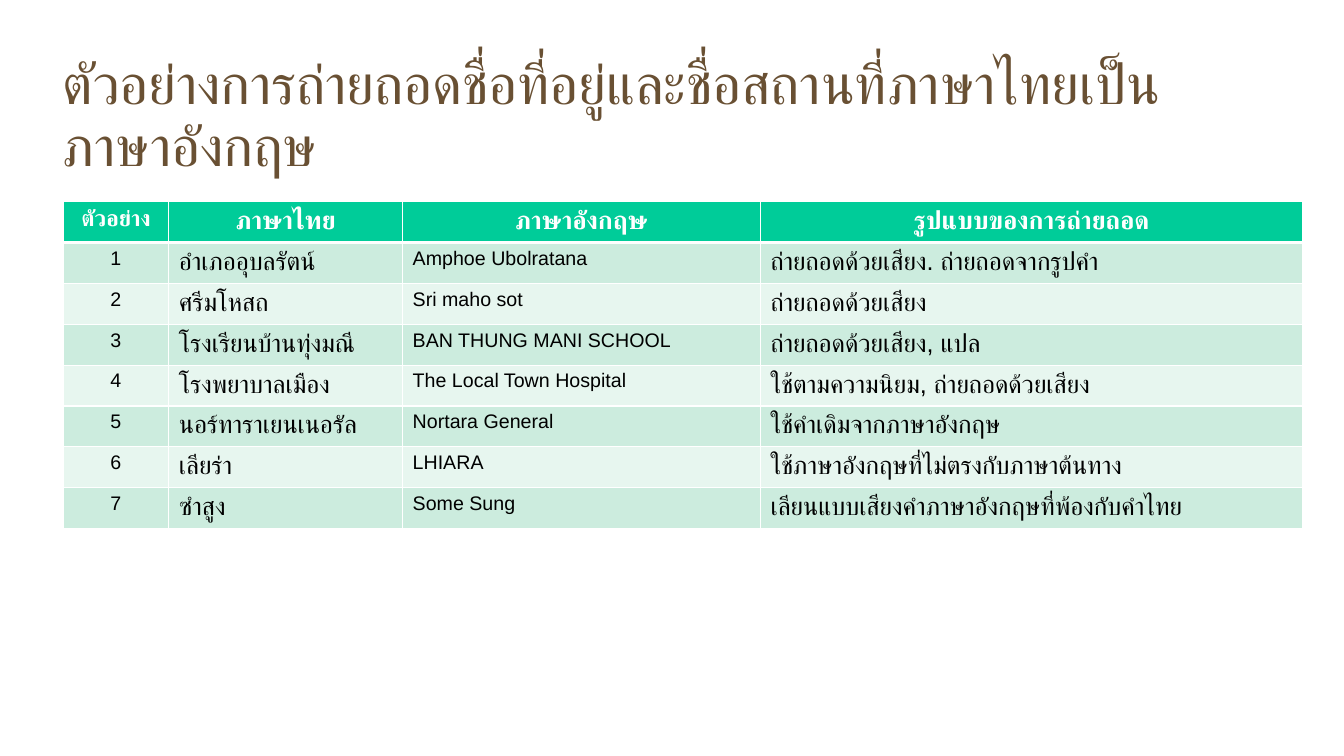
from dataclasses import dataclass

from lxml.etree import SubElement
from pptx import Presentation
from pptx.dml.color import RGBColor
from pptx.enum.lang import MSO_LANGUAGE_ID
from pptx.enum.text import MSO_ANCHOR, PP_ALIGN
from pptx.oxml.ns import qn
from pptx.util import Pt


@dataclass(frozen=True)
class Theme:
    font: str = "Arial"
    brown: str = "695033"
    white: str = "FFFFFF"
    black: str = "000000"
    green: str = "00CC99"
    bands: tuple = ("CCECDE", "E7F6EF")
    title: int = 40
    thai: int = 18
    label: int = 16
    latin: int = 14
    thin: int = 1
    thick: int = 3


THEME = Theme()
TITLE = "ตัวอย่างการถ่ายถอดชื่อที่อยู่และชื่อสถานที่ภาษาไทยเป็นภาษาอังกฤษ"
HEADS = ["ตัวอย่าง", "ภาษาไทย", "ภาษาอังกฤษ", "รูปแบบของการถ่ายถอด"]
ROWS = [
    ("อำเภออุบลรัตน์", "Amphoe Ubolratana", "ถ่ายถอดด้วยเสียง. ถ่ายถอดจากรูปคำ"),
    ("ศรีมโหสถ", "Sri maho sot", "ถ่ายถอดด้วยเสียง"),
    ("โรงเรียนบ้านทุ่งมณี", "BAN THUNG MANI SCHOOL", "ถ่ายถอดด้วยเสียง, แปล"),
    ("โรงพยาบาลเมือง", "The Local Town Hospital", "ใช้ตามความนิยม, ถ่ายถอดด้วยเสียง"),
    ("นอร์ทาราเยนเนอรัล", "Nortara General", "ใช้คำเดิมจากภาษาอังกฤษ"),
    ("เลียร่า", "LHIARA", "ใช้ภาษาอังกฤษที่ไม่ตรงกับภาษาต้นทาง"),
    ("ซำสูง", "Some Sung", "เลียนแบบเสียงคำภาษาอังกฤษที่พ้องกับคำไทย"),
]
COLS = (75.6, 167.04, 255.6, 387.36)


def write(frame, text, size, color, bold=False, align=PP_ALIGN.LEFT):
    """Put one formatted run in a text frame and return its paragraph."""
    para = frame.paragraphs[0]
    para.alignment = align
    run = para.add_run()
    run.text = text
    form = {"name": THEME.font, "size": Pt(size), "bold": bold,
            "language_id": MSO_LANGUAGE_ID.THAI}
    for key, value in form.items():
        setattr(run.font, key, value)
    run.font.color.rgb = RGBColor.from_string(color)
    # Thai letters take the complex script font
    SubElement(run.font._element, qn("a:cs"), typeface=THEME.font)
    return para


def paint(cell, fill, top, bottom):
    """Give a cell its white borders and its fill."""
    props = cell._tc.get_or_add_tcPr()
    sides = {"lnL": THEME.thin, "lnR": THEME.thin, "lnT": top, "lnB": bottom}
    for side, width in sides.items():
        line = SubElement(props, qn(f"a:{side}"), w=str(Pt(width)))
        solid = SubElement(line, qn("a:solidFill"))
        SubElement(solid, qn("a:srgbClr"), val=THEME.white)
    cell.fill.solid()
    cell.fill.fore_color.rgb = RGBColor.from_string(fill)


def add_title(slide, left, top, width, height):
    frame = slide.shapes.add_textbox(Pt(left), Pt(top), Pt(width), Pt(height)).text_frame
    form = {"word_wrap": True, "vertical_anchor": MSO_ANCHOR.MIDDLE,
            "margin_left": 0, "margin_top": 0, "margin_right": 0, "margin_bottom": 0}
    for key, value in form.items():
        setattr(frame, key, value)
    write(frame, TITLE, THEME.title, THEME.brown).line_spacing = 0.93


def add_grid(slide, left, top, width, height):
    count = len(ROWS) + 1
    table = slide.shapes.add_table(count, len(COLS), Pt(left), Pt(top),
                                   Pt(width), Pt(height)).table
    for col, share in zip(table.columns, COLS):
        col.width = Pt(width * share / sum(COLS))
    for row in table.rows:
        row.height = Pt(height / count)

    # Header row
    for c, text in enumerate(HEADS):
        cell = table.cell(0, c)
        size = THEME.thai if c else THEME.label
        write(cell.text_frame, text, size, THEME.white, True, PP_ALIGN.CENTER)
        paint(cell, THEME.green, THEME.thin, THEME.thick)

    # Numbered rows in alternate bands
    sizes = (THEME.latin, THEME.thai, THEME.latin, THEME.thai)
    for r, names in enumerate(ROWS, 1):
        for c, text in enumerate((str(r), *names)):
            cell = table.cell(r, c)
            align = PP_ALIGN.LEFT if c else PP_ALIGN.CENTER
            write(cell.text_frame, text, sizes[c], THEME.black, align=align)
            paint(cell, THEME.bands[(r - 1) % 2],
                  THEME.thick if r == 1 else THEME.thin, THEME.thin)


def main():
    deck = Presentation()
    deck.slide_width, deck.slide_height = Pt(960), Pt(540)
    slide = deck.slides.add_slide(deck.slide_layouts[6])
    add_title(slide, 45, 31, 828, 104.4)
    add_grid(slide, 45, 144, 885.6, 233.6)
    deck.save("out.pptx")


if __name__ == "__main__":
    main()
